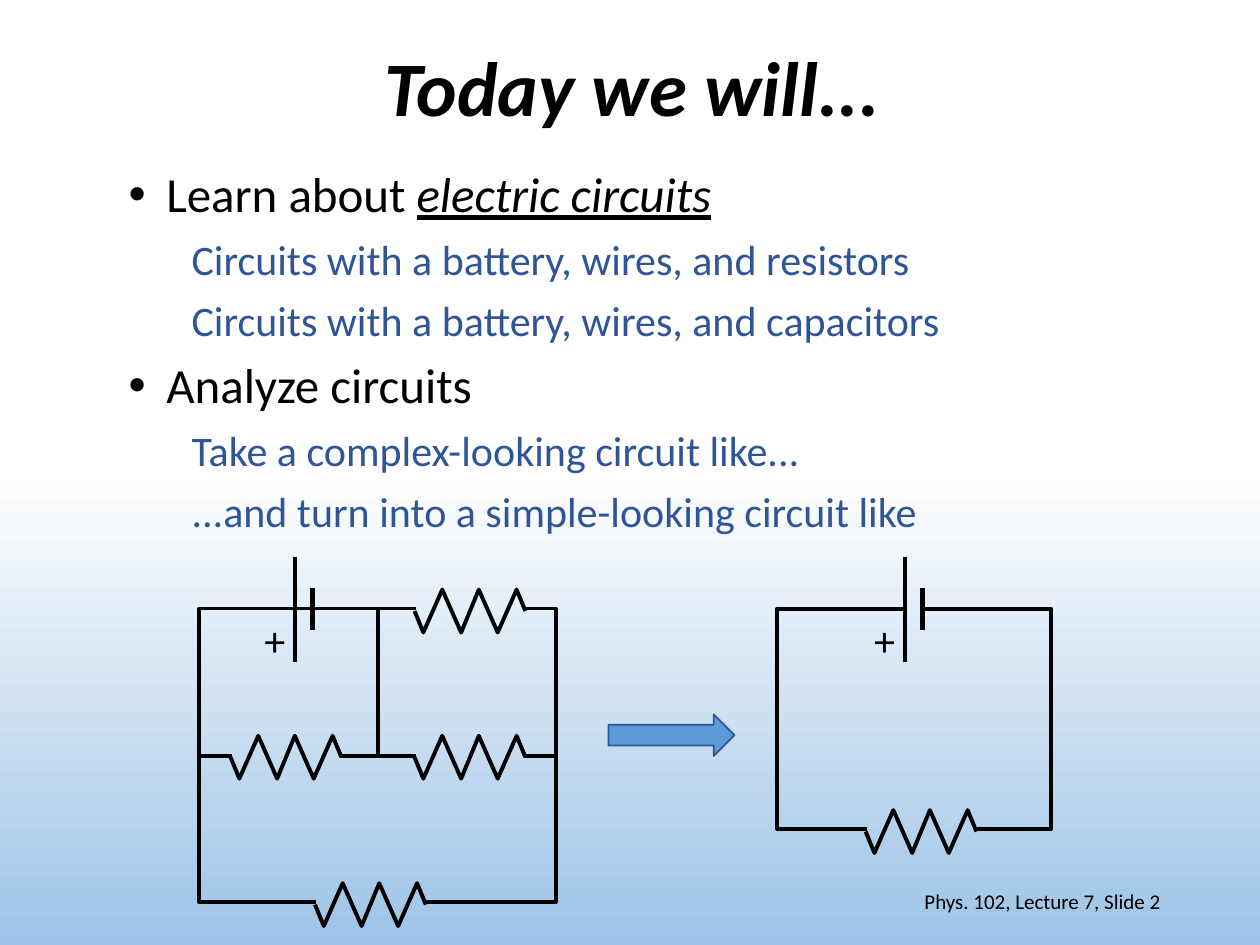
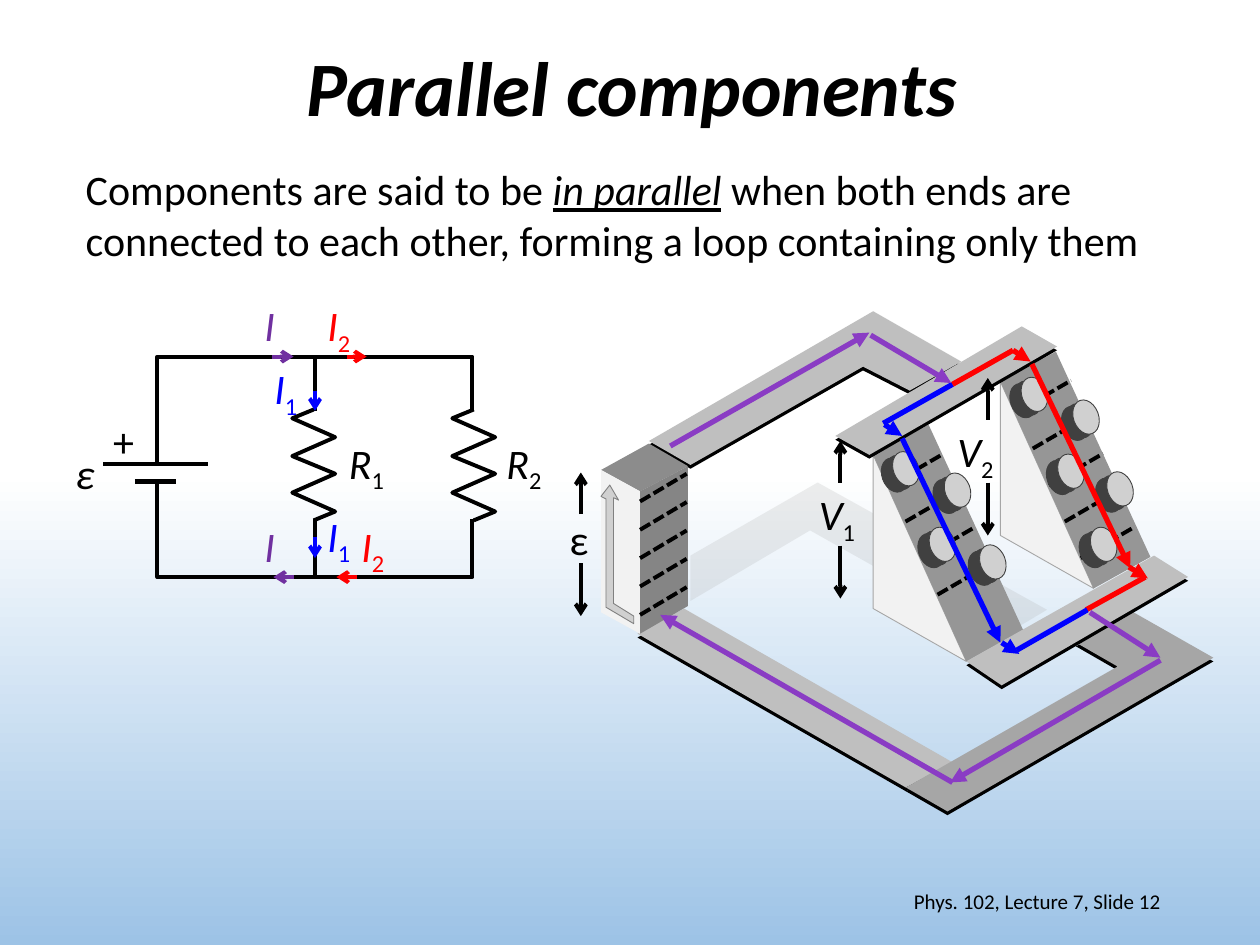
from pptx import Presentation
from pptx.dml.color import RGBColor
from pptx.enum.dml import MSO_LINE
from pptx.enum.shapes import MSO_CONNECTOR, MSO_SHAPE
from pptx.enum.text import MSO_ANCHOR, MSO_AUTO_SIZE, PP_ALIGN
from pptx.oxml.ns import qn
from pptx.util import Inches, Pt
from lxml.etree import SubElement

BLACK, WHITE, SKY = "000000", "FFFFFF", "9DC3E6"
NAVY, RED, BLUE, PURPLE, VIOLET = "2F5597", "FF0000", "0000FF", "7030A0", "8A3CC4"
PLATE, DARK_PLATE, PALE, SLOPE = "BFBFBF", "A6A6A6", "F2F2F2", "969696"
FONT = "Calibri"

AGENDA = [
    (0, [("Learn about ", False), ("electric circuits", True)]),
    (1, [("Circuits with a battery, wires, and resistors", False)]),
    (1, [("Circuits with a battery, wires, and capacitors", False)]),
    (0, [("Analyze circuits", False)]),
    (1, [("Take a complex-looking circuit like...", False)]),
    (1, [("...and turn into a simple-looking circuit like", False)]),
]
DEFINITION = [
    ("Components are said to be ", False),
    ("in parallel", True),
    (" when both ends are connected to each other, forming a loop containing only them", False),
]

ZIGZAG = [(-0.44, 0), (-0.37, 0.17), (-0.22, -0.17), (-0.07, 0.17),
          (0.07, -0.17), (0.22, 0.17), (0.37, -0.17), (0.44, 0)]
COMPLEX_RESISTORS = [(3.73, 4.85), (3.73, 6.01), (2.94, 7.18), (2.27, 6.01)]

CIRCUIT_LABELS = [
    ("+", "", 0.8, 3.25, 0.37, BLACK), ("ε", "", 0.5, 3.5, 0.35, BLACK),
    ("R", "1", 2.67, 3.42, 0.5, BLACK), ("R", "2", 3.92, 3.42, 0.5, BLACK),
    ("I", "2", 2.5, 2.33, 0.4, RED), ("I", "1", 2.08, 2.83, 0.4, BLUE),
    ("I", "", 2, 2.33, 0.29, PURPLE), ("I", "1", 2.5, 4, 0.4, BLUE),
    ("I", "", 2, 4.08, 0.29, PURPLE), ("I", "2", 2.77, 4.08, 0.4, RED),
]
CURRENTS = [
    ((2.75, 2.83), (2.91, 2.83), RED), ((2.5, 3.1), (2.5, 3.26), BLUE),
    ((2.16, 2.83), (2.33, 2.83), PURPLE), ((2.5, 4.26), (2.5, 4.43), BLUE),
    ((2.33, 4.58), (2.17, 4.58), PURPLE), ((2.83, 4.58), (2.67, 4.58), RED),
]

FLOOR_SHADOW = [(5.48, 4.41), (6.49, 3.83), (8.31, 4.84), (7.94, 5.06), (6.43, 4.21), (5.48, 4.77)]
UPPER_TRACK = [(5.15, 3.5), (6.93, 2.47), (7.63, 2.87), (7.22, 3.1), (6.85, 2.91), (5.48, 3.69)]
LOWER_TRACK = [(5.06, 5.03), (5.43, 4.83), (7.56, 6.05), (7.19, 6.25)]
RETURN_TRACK = [(7.19, 6.25), (8.87, 5.29), (8.54, 5.1), (8.98, 4.85), (9.63, 5.22), (7.52, 6.44)]
TOP_PLATE = [(6.63, 3.46), (8.11, 2.59), (8.39, 2.75), (6.9, 3.61)]
BOTTOM_PLATE = [(7.67, 5.25), (9.16, 4.41), (9.43, 4.58), (7.95, 5.44)]
BATTERY_FACES = [
    ([(4.77, 3.73), (5.15, 3.52), (5.46, 3.7), (5.08, 3.9)], "8C8C8C"),
    ([(4.77, 3.73), (5.08, 3.9), (5.08, 5.03), (4.77, 4.86)], PALE),
    ([(5.08, 3.9), (5.46, 3.7), (5.46, 4.81), (5.08, 5.03)], "858585"),
]
LIFT_ARROW = [(4.77, 3.94), (4.84, 3.85), (4.91, 3.97), (4.87, 3.95), (4.87, 4.79),
              (5.03, 4.89), (5.03, 4.95), (4.81, 4.82), (4.81, 3.96)]
WEDGE_FRONT = [(6.93, 3.61), (7.67, 5.25), (6.93, 4.83)]
WEDGE_SLOPE = [(6.93, 3.61), (7.37, 3.37), (8.12, 5), (7.67, 5.25)]
WEDGES = [
    ((1.01, -0.58), 5, [(8.21, 3.13), (8.62, 3.31), (8.5, 3.74), (8.89, 3.88), (8.76, 4.32)]),
    ((0, 0), 4, [(7.19, 3.72), (7.6, 3.89), (7.48, 4.32), (7.88, 4.46)]),
]
VOLTAGES = [
    ("V", "1", 6.4, 3.83, 0.51, 6.67, (3.83, 3.5), (4.33, 4.75)),
    ("V", "2", 7.5, 3.33, 0.51, 7.84, (3.33, 3), (3.83, 4.25)),
    ("ε", "", 4.42, 4.03, 0.35, 4.61, (4.08, 3.75), (4.47, 4.89)),
]
FLOWS = [
    ((9.21, 5.24), (7.54, 6.21), VIOLET, True), ((5.32, 3.54), (6.9, 2.64), VIOLET, True),
    ((7.02, 3.37), (7.16, 3.46), BLUE, True), ((8.04, 2.78), (8.18, 2.87), RED, True),
    ((7.01, 3.36), (7.56, 3.05), BLUE, False), ((6.91, 2.66), (7.55, 3.04), VIOLET, True),
    ((8.62, 4.84), (9.09, 4.58), RED, False), ((7.95, 5.1), (8.09, 5.19), BLUE, True),
    ((8.96, 4.5), (9.11, 4.59), RED, True), ((8.07, 5.16), (8.63, 4.84), BLUE, False),
    ((8.65, 4.86), (9.21, 5.22), VIOLET, True), ((8.19, 2.89), (8.97, 4.51), RED, True),
    ((7.16, 3.48), (7.94, 5.1), BLUE, True), ((7.56, 3.05), (8.04, 2.78), RED, False),
    ((7.56, 6.21), (5.24, 4.88), VIOLET, True),
]


def paint(color_format, value):
    color_format.rgb = RGBColor.from_string(value)


def style(span, size, color=BLACK, bold=False, italic=False, underline=False):
    font = span.font
    font.name, font.size = FONT, Pt(size)
    font.bold, font.italic, font.underline = bold, italic, underline
    paint(font.color, color)


def place(shape, left, top, width, height):
    shape.left, shape.top = Inches(left), Inches(top)
    shape.width, shape.height = Inches(width), Inches(height)


def dress(shape, fill=None, line=None, width=2.25):
    shape.shadow.inherit = False
    if fill:
        shape.fill.solid()
        paint(shape.fill.fore_color, fill)
    else:
        shape.fill.background()
    if line:
        paint(shape.line.color, line)
        shape.line.width = Pt(width)
    else:
        shape.line.fill.background()
    return shape


def block(page, preset, left, top, width, height, fill=None, line=None, weight=2.25):
    shape = page.shapes.add_shape(preset, *map(Inches, (left, top, width, height)))
    return dress(shape, fill, line, weight)


def outline(page, points, fill=None, line=None, width=2.25):
    corners = [(Inches(x), Inches(y)) for x, y in points]
    builder = page.shapes.build_freeform(*corners[0])
    builder.add_line_segments(corners[1:], close=fill is not None)
    return dress(builder.convert_to_shape(), fill, line, width)


def shifted(points, right, down):
    return [(x + right, y + down) for x, y in points]


def wire(page, start, end, color=BLACK, width=2.25, head=None, dashed=False):
    line = page.shapes.add_connector(MSO_CONNECTOR.STRAIGHT, *map(Inches, (*start, *end)))
    paint(line.line.color, color)
    line.line.width = Pt(width)
    if dashed:
        line.line.dash_style = MSO_LINE.SQUARE_DOT
    properties = line._element.spPr
    if head:
        SubElement(properties.find(qn("a:ln")), qn("a:tailEnd"), type=head)
    SubElement(properties, qn("a:effectLst"))


def gap(page, center_x, center_y, width, height):
    shape = page.shapes.add_shape(MSO_SHAPE.RECTANGLE, *map(Inches, (
        center_x - width / 2, center_y - height / 2, width, height)))
    shape.line.fill.background()
    element = shape._element
    element.remove(element.find(qn("p:style")))
    element.set("useBgFill", "1")


def resistor(page, x, y, upright=False):
    gap(page, x, y, *((0.35, 0.86) if upright else (0.86, 0.35)))
    turned = [(down, -along) for along, down in ZIGZAG] if upright else ZIGZAG
    outline(page, shifted(turned, x, y), line=BLACK)


def label(page, symbol, index, left, top, width, color=BLACK, italic=True):
    box = page.shapes.add_textbox(*map(Inches, (left, top, width, 0.5)))
    box.text_frame.word_wrap = False
    box.text_frame.auto_size = MSO_AUTO_SIZE.SHAPE_TO_FIT_TEXT
    para = box.text_frame.paragraphs[0]
    span = para.add_run()
    span.text = symbol
    style(span, 24, color, italic=italic and symbol != "+")
    if index:
        span = para.add_run()
        span.text = index
        style(span, 24, color)
        span._r.get_or_add_rPr().set("baseline", "-25000")


def battery(page, x):
    wire(page, (x, 5.25), (x, 4.42))
    wire(page, (x + 0.14, 5), (x + 0.14, 4.67), width=3)
    label(page, "+", "", x - 0.34, 4.83, 0.37)


def write(para, pieces, size, color=BLACK):
    para.space_before = Pt(0)
    for text, stressed in pieces:
        span = para.add_run()
        span.text = text
        style(span, size, color, italic=stressed, underline=stressed)


def indent(para, margin, hanging, bullet):
    properties = para._p.get_or_add_pPr()
    properties.set("marL", str(Inches(margin)))
    properties.set("indent", str(Inches(hanging)))
    if bullet:
        SubElement(properties, qn("a:buFont"), typeface="Arial")
        SubElement(properties, qn("a:buChar"), char="•")
    else:
        SubElement(properties, qn("a:buNone"))


def new_page(deck, title, number, body_place):
    page = deck.slides.add_slide(deck.slide_layouts[1])
    fill = page.background.fill
    fill.gradient()
    fill.gradient_angle = 270
    for stop, position, color in zip(fill.gradient_stops, (0.5, 1), (WHITE, SKY)):
        stop.position = position
        paint(stop.color, color)
    heading = page.shapes.title
    place(heading, 0.71, 0, 8.62, 1.45)
    heading.text_frame.text = title
    heading.text_frame.vertical_anchor = MSO_ANCHOR.MIDDLE
    para = heading.text_frame.paragraphs[0]
    para.alignment, para.line_spacing = PP_ALIGN.CENTER, 0.9
    style(para.runs[0], 44, bold=True, italic=True)
    footer = page.shapes.add_textbox(*map(Inches, (7.06, 6.95, 2.25, 0.4)))
    footer.text_frame.word_wrap = True
    footer.text_frame.vertical_anchor = MSO_ANCHOR.MIDDLE
    footer.text_frame.text = f"Phys. 102, Lecture 7, Slide {number}"
    para = footer.text_frame.paragraphs[0]
    para.alignment = PP_ALIGN.RIGHT
    style(para.runs[0], 12)
    body = page.placeholders[1]
    place(body, *body_place)
    body.text_frame.auto_size = MSO_AUTO_SIZE.NONE
    return page, body.text_frame


def agenda_page(deck):
    page, body = new_page(deck, "Today we will...", 2, (0.92, 1.25, 8, 3.08))
    for position, (level, pieces) in enumerate(AGENDA):
        para = body.add_paragraph() if position else body.paragraphs[0]
        para.level = level
        write(para, pieces, 24 if level else 28, NAVY if level else BLACK)
        para.space_after = Pt(6)
        indent(para, *((0.5, 0, False) if level else (0.3, -0.3, True)))
    block(page, MSO_SHAPE.RECTANGLE, 1.58, 4.83, 2.83, 2.33, line=BLACK)
    battery(page, 2.34)
    wire(page, (3, 4.83), (3, 6))
    wire(page, (1.58, 6), (4.42, 6))
    for x, y in COMPLEX_RESISTORS:
        resistor(page, x, y)
    block(page, MSO_SHAPE.RECTANGLE, 6.17, 4.83, 2.17, 1.75, line=BLACK)
    resistor(page, 7.31, 6.6)
    gap(page, 7.25, 4.82, 0.16, 0.99)
    battery(page, 7.18)
    block(page, MSO_SHAPE.RIGHT_ARROW, 4.83, 5.67, 1, 0.33, "5B9BD5", NAVY, 1)


def slab(page, points, fill):
    outline(page, shifted(points, 0, 0.03), BLACK)
    outline(page, points, fill)


def wedge(page, offset, dashes, pegs):
    outline(page, shifted(WEDGE_FRONT, *offset), PALE, DARK_PLATE, 0.5)
    outline(page, shifted(WEDGE_SLOPE, *offset), SLOPE)
    for step in range(dashes):
        start, end = shifted([(7.06, 3.85), (7.49, 3.6)],
                             offset[0] + 0.127 * step, offset[1] + 0.29 * step)
        wire(page, start, end, dashed=True)
    for x, y in pegs:
        for right, down, fill in ((-0.09, 0.05, "404040"), (-0.05, 0.03, "404040"), (0, 0, "D0D0D0")):
            peg = block(page, MSO_SHAPE.OVAL, x + right - 0.1, y + down - 0.14, 0.2, 0.28,
                        fill, "404040", 0.5)
            peg.rotation = -20


def parallel_page(deck):
    page, body = new_page(deck, "Parallel components", 12, (0.58, 1.25, 8.83, 0.91))
    write(body.paragraphs[0], DEFINITION, 24)
    indent(body.paragraphs[0], 0, 0, False)

    block(page, MSO_SHAPE.RECTANGLE, 1.25, 2.83, 2.5, 1.75, line=BLACK)
    gap(page, 1.25, 3.75, 0.99, 0.16)
    wire(page, (0.82, 3.68), (1.65, 3.68))
    wire(page, (1.07, 3.82), (1.4, 3.82), width=3)
    wire(page, (2.5, 2.83), (2.5, 4.58))
    for x in (2.49, 3.76):
        resistor(page, x, 3.69, upright=True)
    for entry in CIRCUIT_LABELS:
        label(page, *entry)
    for start, end, color in CURRENTS:
        wire(page, start, end, color, head="arrow")

    shade = outline(page, FLOOR_SHADOW, DARK_PLATE)
    tint = shade._element.spPr.find(qn("a:solidFill"))[0]
    SubElement(tint, qn("a:alpha"), val="20000")
    slab(page, UPPER_TRACK, PLATE)
    slab(page, LOWER_TRACK, PLATE)
    for points, fill in BATTERY_FACES:
        outline(page, points, fill)
    outline(page, LIFT_ARROW, "D0D0D0", "808080", 0.5)
    for step in range(5):
        y = 3.98 + 0.225 * step
        wire(page, (5.08, y), (5.45, y - 0.22), dashed=True)
    slab(page, RETURN_TRACK, DARK_PLATE)
    for entry in WEDGES:
        wedge(page, *entry)
    slab(page, TOP_PLATE, PLATE)
    slab(page, BOTTOM_PLATE, PLATE)
    for symbol, index, left, top, width, x, *arrows in VOLTAGES:
        label(page, symbol, index, left, top, width, italic=symbol == "V")
        for start, end in arrows:
            wire(page, (x, start), (x, end), head="arrow")
    for start, end, color, pointed in FLOWS:
        wire(page, start, end, color, 3, "triangle" if pointed else None)


deck = Presentation()
deck.slide_width, deck.slide_height = Inches(10), Inches(7.5)
agenda_page(deck)
parallel_page(deck)
deck.save("out.pptx")
